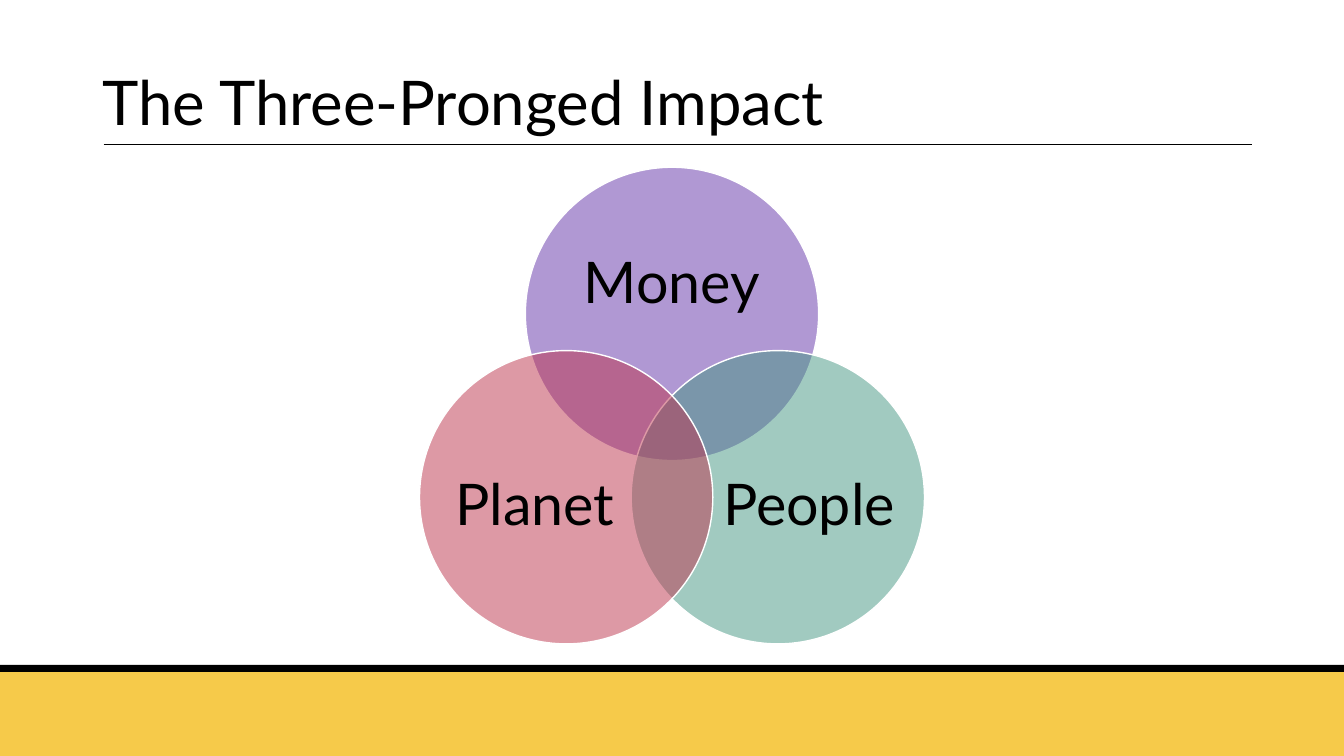
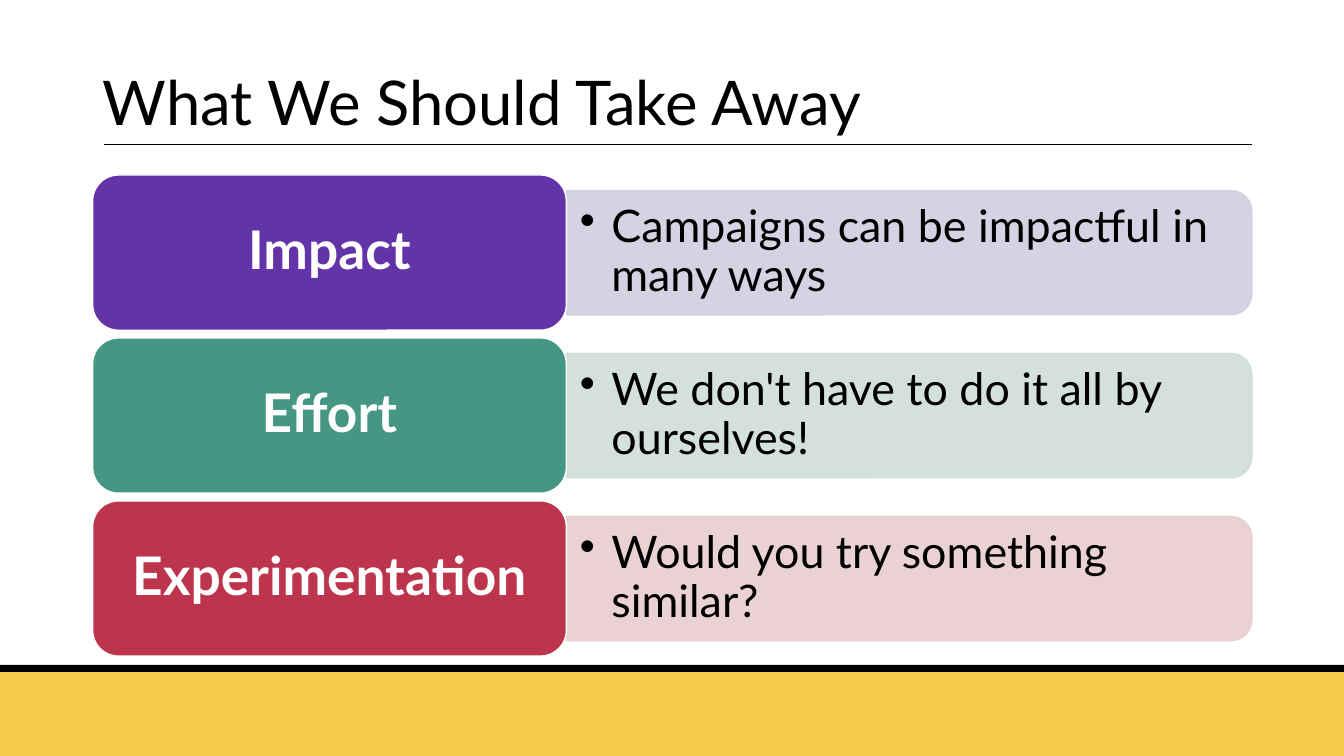
"""Builds a two-slide deck: a three-circle impact diagram and a list of takeaways."""
from math import cos, radians, sin

from lxml import etree
from pptx import Presentation
from pptx.dml.color import RGBColor
from pptx.enum.shapes import MSO_CONNECTOR, MSO_SHAPE
from pptx.enum.text import MSO_ANCHOR, PP_ALIGN
from pptx.oxml.ns import qn
from pptx.util import Pt

RECT, OVAL = MSO_SHAPE.RECTANGLE, MSO_SHAPE.OVAL
CARD, PANEL = MSO_SHAPE.ROUNDED_RECTANGLE, MSO_SHAPE.ROUND_2_SAME_RECTANGLE
STRAIGHT = MSO_CONNECTOR.STRAIGHT
LEFT, CENTER = PP_ALIGN.LEFT, PP_ALIGN.CENTER
MIDDLE, BOTTOM = MSO_ANCHOR.MIDDLE, MSO_ANCHOR.BOTTOM

THEME = {
    "font": "Lato", "black": "000000", "white": "FFFFFF", "gold": "F6CA4A",
    "purple": "6333A8", "green": "459683", "red": "BD344D",
    "pale_purple": "D3CEE1", "pale_green": "CFDDD9", "pale_red": "E8CED0",
    "title": 44, "circle": 41, "card": 38, "panel": 32,
}

IMPACT_TITLE = "The Three-Pronged Impact"
CIRCLES = [
    ("Money", "purple", -90, (0, -20.9), (154, 94.3)),
    ("People", "green", 30, (22.3, 7), (126, 115.2)),
    ("Planet", "red", 150, (-22.3, 7), (126, 115.2)),
]
TAKEAWAY_TITLE = "What We Should Take Away"
TAKEAWAYS = [
    ("Impact", "Campaigns can be impactful in many ways", "purple"),
    ("Effort", "We don't have to do it all by ourselves!", "green"),
    ("Experimentation", "Would you try something similar?", "red"),
]

SLIDE_W, SLIDE_H = 960, 540
MARGIN, RIGHT = 66.2, 894.2
BAND_TOP, STRIPE_H = 480, 5
HUB_X, HUB_Y, ORBIT, DIAMETER = 480, 311.5, 87.3, 209.5
ROW_TOP, ROW_PITCH, CARD_W, CARD_H, PANEL_H = 125, 116.4, 338.4, 110.9, 88.8
BULLET_INDENT = 22.5


def color(name):
    return RGBColor.from_string(THEME[name])


def add_block(s, kind, x, y, w, h, fill):
    sp = s.shapes.add_shape(kind, Pt(x), Pt(y), Pt(w), Pt(h))
    sp.shadow.inherit = False
    sp.fill.solid()
    sp.fill.fore_color.rgb = color(fill)
    sp.line.fill.background()
    return sp


def outline(sp, name, width=1):
    sp.line.color.rgb = color(name)
    sp.line.width = Pt(width)


def fade(sp, percent):
    for clr in sp._element.spPr.iter(qn("a:srgbClr")):
        etree.SubElement(clr, qn("a:alpha"), val=str(percent * 1000))


def write(sp, text, size, name="black", align=CENTER, anchor=MIDDLE, inset=(0, 0), bold=False):
    tf = sp.text_frame
    tf.word_wrap = True
    tf.vertical_anchor = anchor
    tf.margin_left = tf.margin_right = Pt(inset[0])
    tf.margin_top = tf.margin_bottom = Pt(inset[1])
    p = tf.paragraphs[0]
    p.alignment = align
    p.line_spacing = 0.9
    r = p.add_run()
    r.text = text
    r.font.name = THEME["font"]
    r.font.size = Pt(THEME[size])
    r.font.bold = bold
    r.font.color.rgb = color(name)
    return p


def add_text(s, x, y, w, h, text, size, **style):
    return write(s.shapes.add_textbox(Pt(x), Pt(y), Pt(w), Pt(h)), text, size, **style)


def add_bullet(p):
    pPr = p._p.get_or_add_pPr()
    pPr.set("marL", str(Pt(BULLET_INDENT)))
    pPr.set("indent", str(-Pt(BULLET_INDENT)))
    etree.SubElement(pPr, qn("a:buChar"), char="•")


def add_slide(prs, title):
    s = prs.slides.add_slide(prs.slide_layouts[6])
    add_block(s, RECT, 0, BAND_TOP, SLIDE_W, SLIDE_H - BAND_TOP, "gold")
    add_block(s, RECT, 0, BAND_TOP - STRIPE_H, SLIDE_W, STRIPE_H, "black")
    rule = s.shapes.add_connector(STRAIGHT, Pt(74), Pt(103), Pt(RIGHT), Pt(103))
    outline(rule, "black", 0.5)
    etree.SubElement(rule._element.spPr, qn("a:effectLst"))
    add_text(s, MARGIN, 7.2, RIGHT - MARGIN, 95.8, title, "title",
             align=LEFT, anchor=BOTTOM, inset=(7.2, 3.6))
    return s


def add_impact(prs):
    s = add_slide(prs, IMPACT_TITLE)
    for label, fill, angle, (dx, dy), (w, h) in CIRCLES:
        cx = HUB_X + ORBIT * cos(radians(angle))
        cy = HUB_Y + ORBIT * sin(radians(angle))
        sp = add_block(s, OVAL, cx - DIAMETER / 2, cy - DIAMETER / 2, DIAMETER, DIAMETER, fill)
        fade(sp, 50)
        outline(sp, "white")
        add_text(s, cx + dx - w / 2, cy + dy - h / 2, w, h, label, "circle")


def add_takeaways(prs):
    s = add_slide(prs, TAKEAWAY_TITLE)
    panel_x = MARGIN + CARD_W
    panel_w = RIGHT - panel_x
    for i, (label, text, fill) in enumerate(TAKEAWAYS):
        top = ROW_TOP + i * ROW_PITCH
        cx, cy = panel_x + panel_w / 2, top + CARD_H / 2
        pale = "pale_" + fill
        panel = add_block(s, PANEL, cx - PANEL_H / 2, cy - panel_w / 2, PANEL_H, panel_w, pale)
        panel.rotation = 90
        outline(panel, pale)
        fade(panel, 90)
        add_bullet(add_text(s, panel_x, cy - 40, panel_w - 4.4, 80, text, "panel",
                            align=LEFT, inset=(9.6, 4.8)))
        card = add_block(s, CARD, MARGIN, top, CARD_W, CARD_H, fill)
        outline(card, "white")
        write(card, label, "card", name="white", inset=(11.5, 5.8), bold=True)


def main():
    prs = Presentation()
    prs.slide_width, prs.slide_height = Pt(SLIDE_W), Pt(SLIDE_H)
    add_impact(prs)
    add_takeaways(prs)
    prs.save("out.pptx")


if __name__ == "__main__":
    main()
